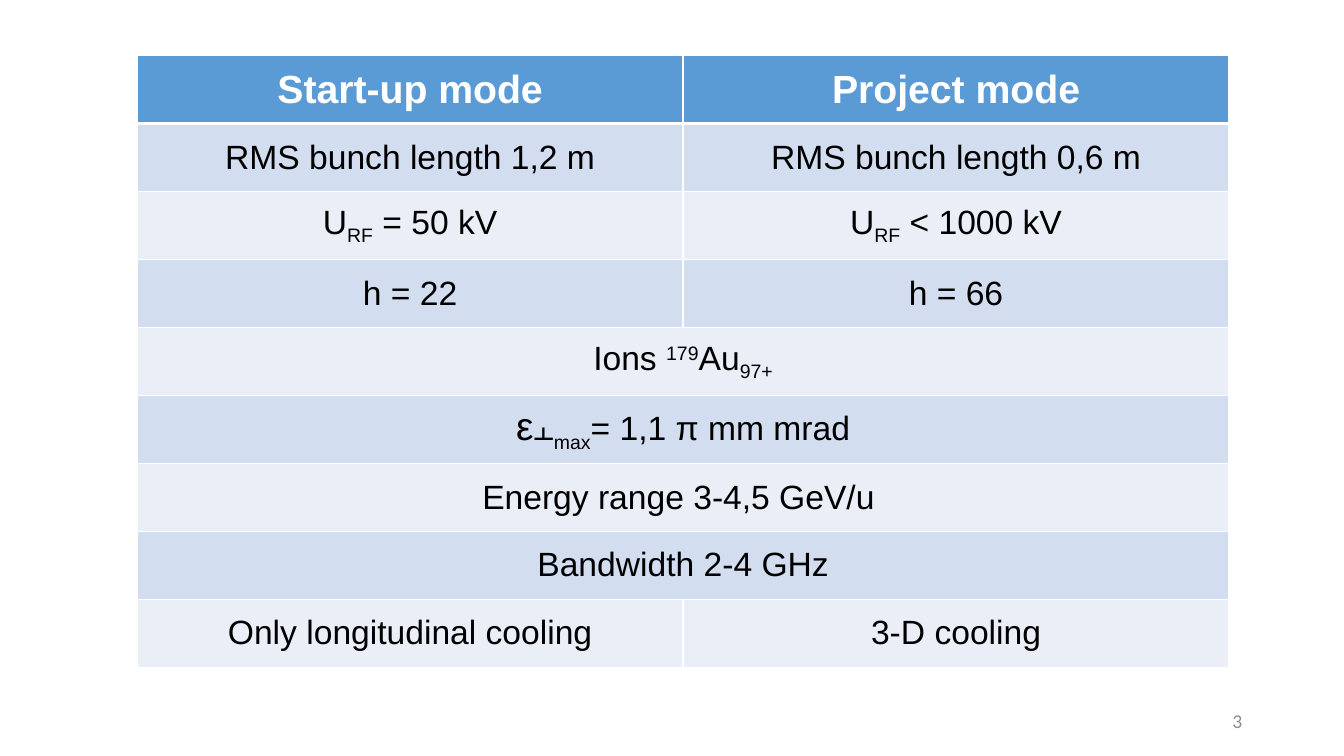
from dataclasses import dataclass

from lxml.etree import SubElement
from pptx import Presentation
from pptx.dml.color import RGBColor
from pptx.enum.text import MSO_VERTICAL_ANCHOR as Anchor, PP_PARAGRAPH_ALIGNMENT as Align
from pptx.oxml.ns import qn
from pptx.util import Inches, Pt

WHITE = RGBColor(0xFF, 0xFF, 0xFF)
BLACK = RGBColor(0x00, 0x00, 0x00)
GRAY = RGBColor(0x8C, 0x8C, 0x8C)
HEADER_BLUE = RGBColor(0x5B, 0x9B, 0xD5)
BAND_DARK = RGBColor(0xD2, 0xDE, 0xEF)
BAND_LIGHT = RGBColor(0xEA, 0xEF, 0xF7)

SUBSCRIPT, SUPERSCRIPT = -25, 30
HEADER_FONT = {"name": "Arial", "size": Pt(28), "bold": True}
BODY_FONT = {"name": "Arial", "size": Pt(24), "bold": False}
NUMBER_FONT = {"name": "Calibri", "size": Pt(14)}
CELL_FORMAT = {
    "vertical_anchor": Anchor.MIDDLE,
    "margin_left": Inches(0.12),
    "margin_right": Inches(0.12),
    "margin_top": Inches(0.06),
    "margin_bottom": Inches(0.06),
}


@dataclass(frozen=True)
class Piece:
    text: str
    baseline: int = 0
    size: int | None = None


@dataclass(frozen=True)
class Row:
    """One table row; a single cell spans both columns."""
    cells: tuple[tuple[Piece, ...], ...]


def plain_row(*texts: str) -> Row:
    return Row(tuple((Piece(text),) for text in texts))


RF = Piece("RF", SUBSCRIPT)
ROWS = [
    plain_row("Start-up mode", "Project mode"),
    plain_row("RMS bunch length 1,2 m", "RMS bunch length 0,6 m"),
    Row(((Piece("U"), RF, Piece(" = 50 kV")), (Piece("U"), RF, Piece(" < 1000 kV")))),
    plain_row("h = 22", "h = 66"),
    Row(((Piece("Ions "), Piece("179", SUPERSCRIPT), Piece("Au"), Piece("97+", SUBSCRIPT)),)),
    Row(((Piece("ε", size=28), Piece("⫠"), Piece("max", SUBSCRIPT), Piece("= 1,1 π mm mrad")),)),
    plain_row("Energy range 3-4,5 GeV/u "),
    plain_row("Bandwidth 2-4 GHz"),
    plain_row("Only longitudinal cooling", "3-D cooling"),
]


def apply_format(target, values: dict) -> None:
    for name, value in values.items():
        setattr(target, name, value)


def write_pieces(paragraph, pieces: tuple[Piece, ...], font: dict, color: RGBColor) -> None:
    for piece in pieces:
        run = paragraph.add_run()
        run.text = piece.text
        apply_format(run.font, font)
        run.font.color.rgb = color
        if piece.size:
            run.font.size = Pt(piece.size)
        if piece.baseline:
            run.font._element.set("baseline", str(piece.baseline * 1000))


def add_borders(cell, widths: dict[str, int]) -> None:
    properties = cell._tc.get_or_add_tcPr()
    for side, width in widths.items():
        line = SubElement(properties, qn(f"a:ln{side}"), w=str(Pt(width)))
        fill = SubElement(line, qn("a:solidFill"))
        SubElement(fill, qn("a:srgbClr"), val=str(WHITE))


def style_cell(cell, row_index: int) -> None:
    # Borders come before the fill in the cell properties
    top, bottom = (3 if row_index == 1 else 1), (3 if row_index == 0 else 1)
    add_borders(cell, {"L": 1, "R": 1, "T": top, "B": bottom})
    cell.fill.solid()
    band = BAND_DARK if row_index % 2 else BAND_LIGHT
    cell.fill.fore_color.rgb = band if row_index else HEADER_BLUE
    apply_format(cell, CELL_FORMAT)


def add_mode_table(slide) -> None:
    table = slide.shapes.add_table(
        len(ROWS), 2, Inches(1.36), Inches(0.55), Inches(10.83), Inches(6.07)
    ).table
    for row_index, row in enumerate(ROWS):
        for cell in table.rows[row_index].cells:
            style_cell(cell, row_index)
        if len(row.cells) == 1:
            table.cell(row_index, 0).merge(table.cell(row_index, 1))
        font, color = (BODY_FONT, BLACK) if row_index else (HEADER_FONT, WHITE)
        for column_index, pieces in enumerate(row.cells):
            paragraph = table.cell(row_index, column_index).text_frame.paragraphs[0]
            paragraph.alignment = Align.CENTER
            write_pieces(paragraph, pieces, font, color)


def add_slide_number(slide) -> None:
    box = slide.shapes.add_textbox(Inches(9.42), Inches(6.95), Inches(3), Inches(0.4))
    apply_format(box.text_frame, {"word_wrap": True, "vertical_anchor": Anchor.MIDDLE})
    paragraph = box.text_frame.paragraphs[0]
    paragraph.alignment = Align.RIGHT
    write_pieces(paragraph, (Piece("3"),), NUMBER_FONT, GRAY)


def main() -> None:
    presentation = Presentation()
    presentation.slide_width = Inches(13.33)
    presentation.slide_height = Inches(7.5)
    slide = presentation.slides.add_slide(presentation.slide_layouts[6])
    add_mode_table(slide)
    add_slide_number(slide)
    presentation.save("out.pptx")


if __name__ == "__main__":
    main()
